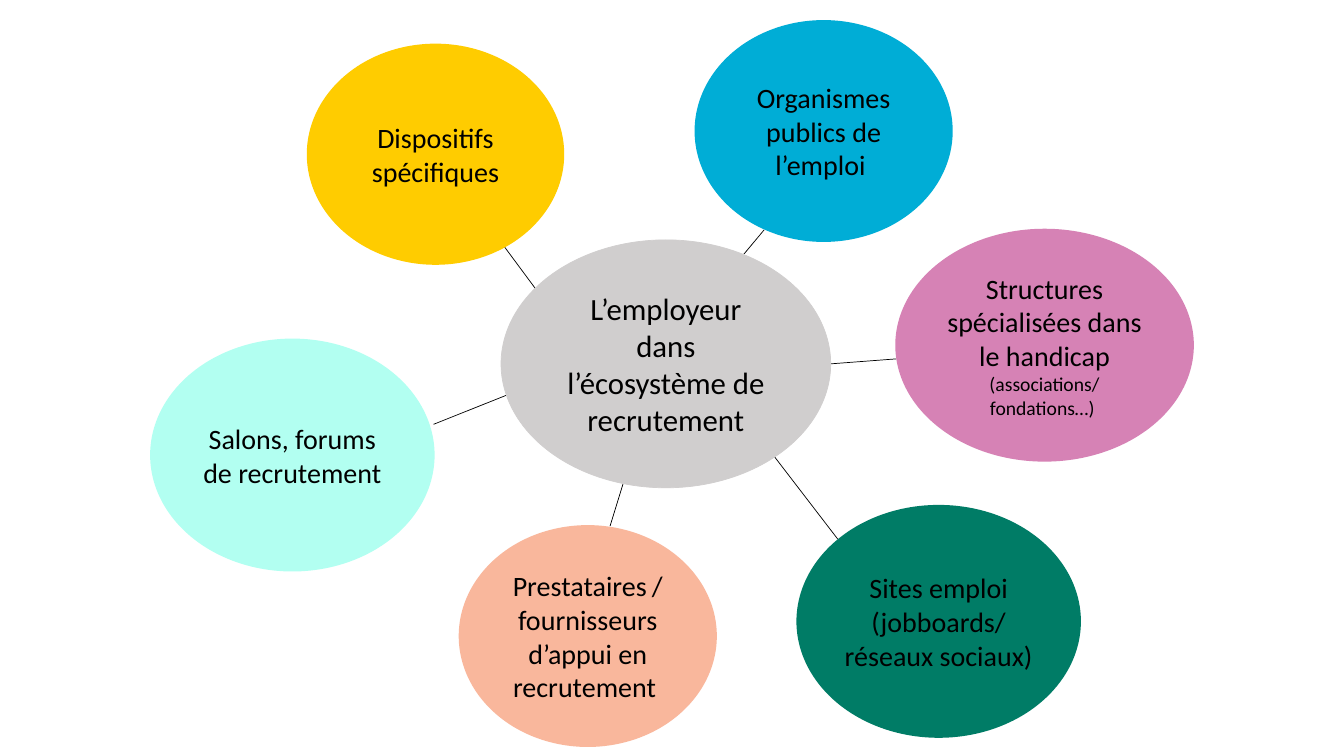
"""Build a slide mapping the employer's recruitment ecosystem."""
import pptx
import pptx.dml.color
import pptx.enum.shapes
import pptx.enum.text
import pptx.oxml
import pptx.oxml.ns
import pptx.util

COLOURS = {
    "ink": "000000",
    "grey": "D0CECE",
    "blue": "00ADD6",
    "pink": "D682B5",
    "peach": "F9B79C",
    "mint": "B2FFF1",
    "green": "007C66",
    "yellow": "FFCC00",
}
SMALL = (19.05, 29.07)
MEDIUM = (21.01, 30.53)
WIDE = (22.06, 30.53)

SPOKES = [
    ((57.39, 59.87), (62.34, 71.33)),
    ((40.21, 39.07), (37.43, 32.4)),
    ((38.26, 51.87), (32.26, 56.13)),
    ((55.36, 33.6), (56.86, 30.4)),
    ((61.82, 48.13), (66.69, 47.47)),
    ((46.36, 64), (45.39, 69.6)),
]
ACTORS = [
    ((51.76, 2.8), SMALL, "blue", 1.5, [("Organismes publics de l’emploi ", 20)]),
    ((66.69, 30.4), WIDE, "pink", 1.5,
     [("Structures spécialisées dans le handicap ", 20),
      ("(associations/ fondations…) ", 14)]),
    ((34.21, 69.6), SMALL, "peach", 1.5,
     [("Prestataires", 20), (" ", 16),
      ("/ fournisseurs d’appui en recrutement ", 20)]),
    ((11.25, 44.93), MEDIUM, "mint", 1.5, [("Salons, forums de recrutement", 20)]),
    ((59.34, 66.93), MEDIUM, "green", 1.5,
     [("Sites emploi (jobboards/ réseaux sociaux)", 20)]),
    ((22.88, 5.87), SMALL, "yellow", 1, [("Dispositifs spécifiques", 20)]),
]


class EcosystemSlide:
    """Draw styled elements placed by percentages of the slide's size."""

    font = "Calibri"

    def __init__(self, deck):
        self.width = deck.slide_width
        self.height = deck.slide_height
        self.page = deck.slides.add_slide(deck.slide_layouts[6])

    def place(self, point):
        """Turn a pair of percentages into slide lengths."""
        across, down = point
        return round(self.width * across / 100), round(self.height * down / 100)

    def colour(self, name):
        """Look up a named colour."""
        return pptx.dml.color.RGBColor.from_string(COLOURS[name])

    def spoke(self, start, end):
        """Draw a thin line between two points."""
        line = self.page.shapes.add_connector(
            pptx.enum.shapes.MSO_CONNECTOR.STRAIGHT,
            *self.place(start), *self.place(end))
        line.line.color.rgb = self.colour("ink")
        line.line.width = pptx.util.Pt(0.5)
        properties = line._element.find(pptx.oxml.ns.qn("p:spPr"))
        properties.append(pptx.oxml.parse_xml(
            "<a:effectLst %s/>" % pptx.oxml.ns.nsdecls("a")))

    def bubble(self, corner, size, colour, outline, spans, inset=(0.04, 0.05)):
        """Draw a filled ellipse with centred text."""
        shape = self.page.shapes.add_shape(
            pptx.enum.shapes.MSO_SHAPE.OVAL,
            *self.place(corner), *self.place(size))
        shape.shadow.inherit = False
        shape.fill.solid()
        shape.fill.fore_color.rgb = self.colour(colour)
        shape.line.color.rgb = self.colour(colour)
        shape.line.width = pptx.util.Pt(outline)
        box = shape.text_frame
        box.word_wrap = True
        box.vertical_anchor = pptx.enum.text.MSO_ANCHOR.MIDDLE
        box.margin_left = box.margin_right = pptx.util.Inches(inset[0])
        box.margin_top = box.margin_bottom = pptx.util.Inches(inset[1])
        para = box.paragraphs[0]
        para.alignment = pptx.enum.text.PP_ALIGN.CENTER
        for text, points in spans:
            span = para.add_run()
            span.text = text
            span.font.name = self.font
            span.font.size = pptx.util.Pt(points)
            span.font.color.rgb = self.colour("ink")


def main():
    """Build and save the deck."""
    deck = pptx.Presentation()
    deck.slide_width = pptx.util.Inches(13.33)
    deck.slide_height = pptx.util.Inches(7.5)
    slide = EcosystemSlide(deck)
    for start, end in SPOKES:
        slide.spoke(start, end)
    slide.bubble((37.28, 31.73), (24.53, 32.8), "grey", 0.5,
                 [("L’employeur dans l’écosystème de recrutement", 22)],
                 inset=(0.1, 0.05))
    for actor in ACTORS:
        slide.bubble(*actor)
    deck.save("out.pptx")


if __name__ == "__main__":
    main()
